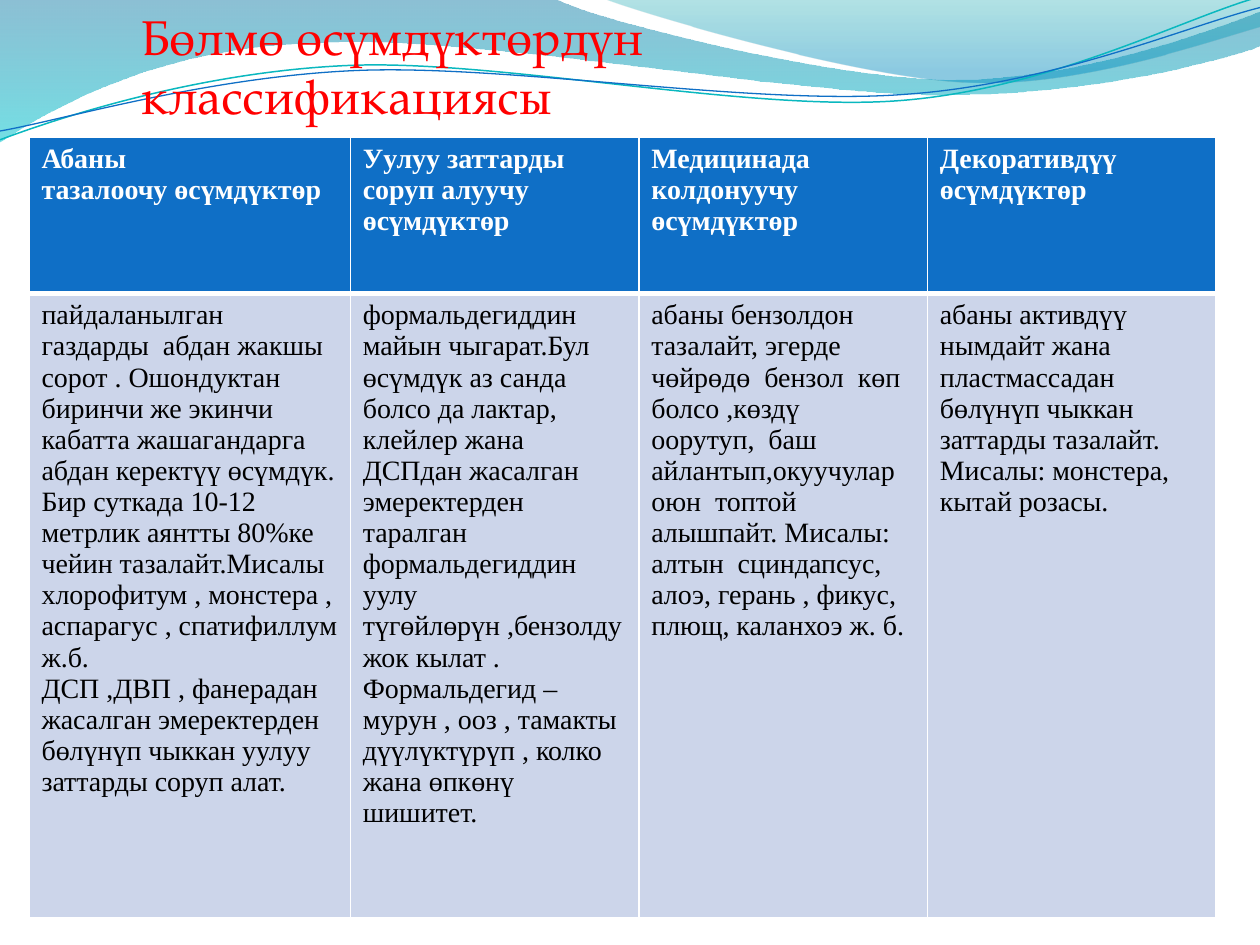
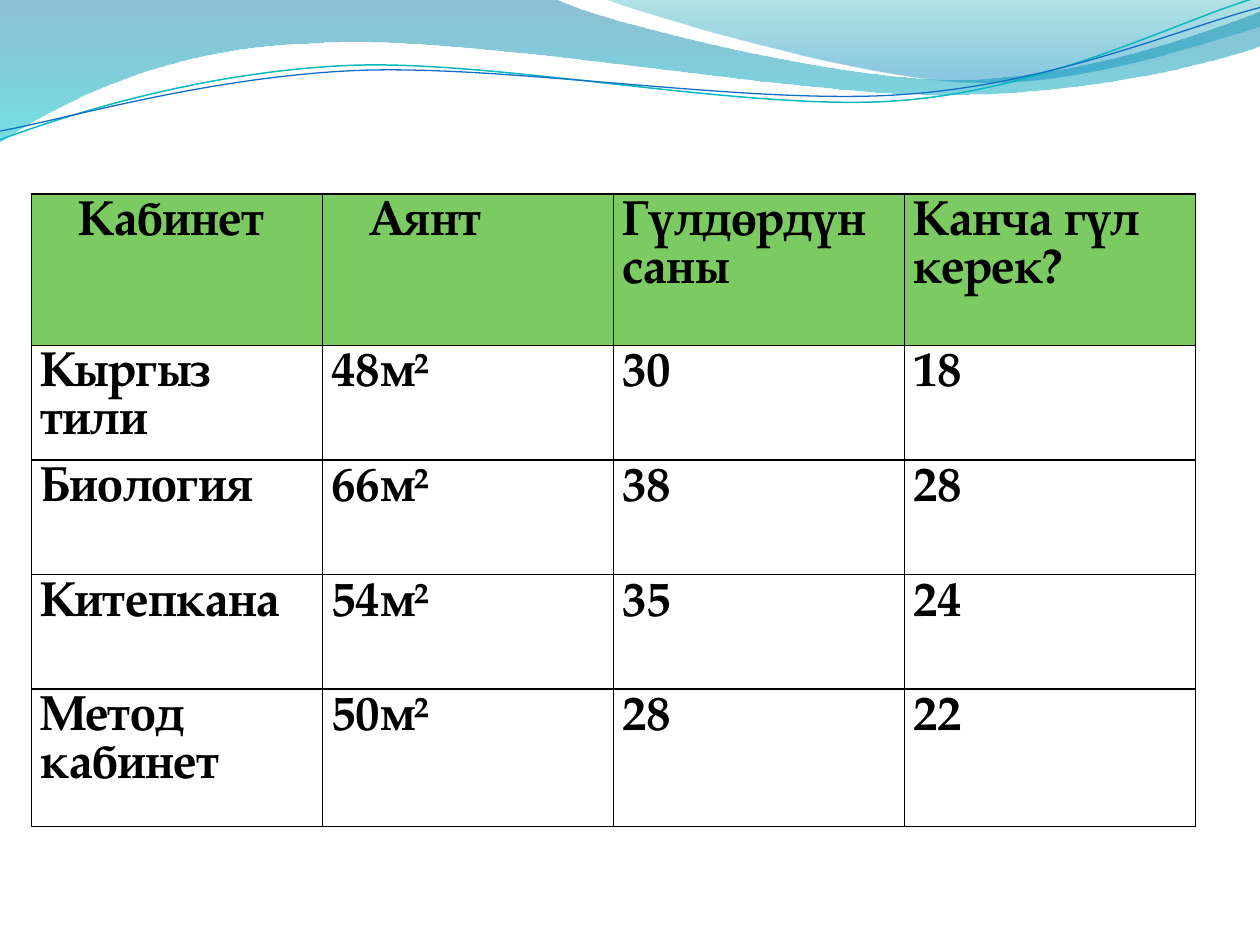
"""Build two slides on indoor plants: a classification table and a count by room."""
import pptx
import pptx.util
import pptx.dml.color
import pptx.enum.text
import pptx.oxml
import pptx.oxml.ns

Inches, Pt = pptx.util.Inches, pptx.util.Pt
RGB = pptx.dml.color.RGBColor
qn = pptx.oxml.ns.qn

WHITE = RGB(0xFF, 0xFF, 0xFF)
BLACK = RGB(0x00, 0x00, 0x00)
RED = RGB(0xFF, 0x00, 0x00)
BLUE = RGB(0x0F, 0x6F, 0xC6)
TEAL = RGB(0x0A, 0xB8, 0xBF)
GREEN = RGB(0x7C, 0xCA, 0x62)
PALE = RGB(0xCC, 0xD5, 0xEA)
DEEP = RGB(0x00, 0x74, 0xA1)
AQUA = RGB(0x00, 0xC6, 0xCF)
SEA = RGB(0x00, 0xA1, 0xA9)
SKY = RGB(0x00, 0x8B, 0xBF)
SERIF = "TeX Gyre Pagella"
ROMAN = "Times New Roman"


def trace(shapes, start, steps, close):
    """Draw an outline from points (straight) and Bézier triples (curved)."""
    dots = [step[i:i + 2] for step in steps for i in range(0, len(step), 2)]
    path = shapes.build_freeform(Inches(start[0]), Inches(start[1]))
    path.add_line_segments([(Inches(x), Inches(y)) for x, y in dots], close=close)
    shape = path.convert_to_shape()
    shape.shadow.inherit = False
    nodes = iter(list(shape.element.iter(qn("a:lnTo"))))
    for step in steps:
        node = next(nodes)
        if len(step) == 6:
            node.tag = qn("a:cubicBezTo")
            for _ in range(2):
                extra = next(nodes)
                node.append(extra[0])
                extra.getparent().remove(extra)
    return shape


def grid(slide, left, top, widths, heights, rows, face, size, looks):
    """Add a table; looks holds fill, ink, bold, edge colour and edge widths (L, R, T, B) per row."""
    frame = slide.shapes.add_table(len(rows), len(widths), Inches(left), Inches(top),
                                   Inches(sum(widths)), Inches(sum(heights)))
    table = frame.table
    table.horz_banding = False
    for col, width in zip(table.columns, widths):
        col.width = Inches(width)
    for line, height, texts, look in zip(table.rows, heights, rows, looks):
        line.height = Inches(height)
        fill, ink, bold, edge, sides = look
        for cell, text in zip(line.cells, texts):
            cell.text_frame.text = text
            for para in cell.text_frame.paragraphs:
                for run in para.runs:
                    font = run.font
                    font.name, font.size, font.bold = face, Pt(size), bold
                    font.color.rgb = ink
            cell.fill.solid()
            cell.fill.fore_color.rgb = fill
            for i, (side, width) in enumerate(zip("LRTB", sides)):
                cell._tc.get_or_add_tcPr().insert(i, pptx.oxml.parse_xml(
                    f'<a:ln{side} xmlns:a="http://schemas.openxmlformats.org/drawingml/2006/main" '
                    f'w="{Pt(width)}"><a:solidFill><a:srgbClr val="{edge}"/></a:solidFill></a:ln{side}>'))
    return table


prs = pptx.Presentation()
prs.slide_width, prs.slide_height = Inches(10), Inches(7.5)
first = prs.slides.add_slide(prs.slide_layouts[5])
second = prs.slides.add_slide(prs.slide_layouts[6])

bands = [
    ((0, 0), [(4.4, -0.01), (4.76, 0.17, 6.64, 0.63, 7.58, 0.63),
              (8.53, 0.63, 9.58, 0.26, 10, 0.09), (10.01, 0.36),
              (9.83, 0.44, 8.7, 0.76, 7.46, 0.75), (6.22, 0.75, 3.82, 0.28, 2.57, 0.34),
              (1.29, 0.36, 0.46, 0.83, -0.01, 1.13)],
     [(0, DEEP, 45), (1, AQUA, 55)]),
    ((4.79, -0.01), [(5.09, 0.11, 6.82, 0.62, 7.69, 0.65),
                     (8.56, 0.69, 9.61, 0.32, 10, 0.21), (10, 0)],
     [(0, SEA, 30), (0.8, SKY, 45)]),
]
curves = [
    ((0, 1.11), [(0.48, 0.93, 1.58, 0.57, 2.77, 0.52), (3.95, 0.47, 5.93, 0.89, 7.13, 0.8),
                 (8.33, 0.71, 9.38, 0.15, 9.98, -0.02)], TEAL, 0.85),
    ((0, 1.04), [(0.47, 0.96, 1.64, 0.61, 2.83, 0.56), (4.03, 0.51, 5.97, 0.84, 7.17, 0.75),
                 (8.36, 0.67, 9.41, 0.21, 10, 0.06)], BLUE, 0.75),
]
waves = []
for start, steps, stops in bands:
    band = trace(first.shapes, start, steps, True)
    band.line.fill.background()
    band.fill.gradient()
    band.fill.gradient_angle = 270
    for stop, (place, tint, alpha) in zip(band.fill.gradient_stops, stops):
        stop.position = place
        stop.color.rgb = tint
    tints = band.element.spPr.find(qn("a:gradFill")).iter(qn("a:srgbClr"))
    for node, stop in zip(list(tints), stops):
        node.append(node.makeelement(qn("a:alpha"), {"val": str(stop[2] * 1000)}))
    waves.append(band)
for start, steps, tint, width in curves:
    curve = trace(first.shapes, start, steps, False)
    curve.fill.background()
    curve.line.color.rgb = tint
    curve.line.width = Pt(width)
    waves.append(curve)
for i, wave in enumerate(waves):
    prs.slide_master.shapes.element.insert(2 + i, wave.element)

title = first.shapes.title
title.left, title.top, title.width, title.height = map(Inches, (1.02, 0, 7.45, 0.57))
frame = title.text_frame
frame.text = "Бөлмө өсүмдүктөрдүн классификациясы"
frame.word_wrap = True
frame.auto_size = pptx.enum.text.MSO_AUTO_SIZE.NONE
frame.vertical_anchor = pptx.enum.text.MSO_ANCHOR.TOP
frame.paragraphs[0].alignment = pptx.enum.text.PP_ALIGN.LEFT
font = frame.paragraphs[0].runs[0].font
font.name, font.size = SERIF, Pt(28)
font.color.rgb = RED

kinds = [
    ["Абаны\nтазалоочу өсүмдүктөр",
     "Уулуу заттарды соруп алуучу өсүмдүктөр",
     "Медицинада колдонуучу өсүмдүктөр",
     "Декоративдүү өсүмдүктөр"],
    ["пайдаланылган газдарды  абдан жакшы сорот . Ошондуктан биринчи же экинчи кабатта "
     "жашагандарга  абдан керектүү өсүмдүк.\n"
     "Бир суткада 10-12 метрлик аянтты 80%ке чейин тазалайт.Мисалы хлорофитум , монстера , "
     "аспарагус , спатифиллум ж.б.\n"
     "ДСП ,ДВП , фанерадан жасалган эмеректерден бөлүнүп чыккан уулуу заттарды соруп алат.",
     "формальдегиддин\n"
     "майын чыгарат.Бул өсүмдүк аз санда болсо да лактар, клейлер жана ДСПдан жасалган "
     "эмеректерден таралган формальдегиддин уулу түгөйлөрүн ,бензолду жок кылат .\n"
     "Формальдегид – мурун , ооз , тамакты дүүлүктүрүп , колко жана өпкөнү  шишитет.",
     "абаны бензолдон тазалайт, эгерде чөйрөдө  бензол  көп  болсо ,көздү   оорутуп,  баш  "
     "айлантып,окуучулар оюн  топтой   алышпайт. Мисалы: алтын  сциндапсус,\n"
     "алоэ, герань , фикус, плющ, каланхоэ ж. б.",
     "абаны активдүү нымдайт жана пластмассадан бөлүнүп чыккан заттарды тазалайт. "
     "Мисалы: монстера, кытай розасы."],
]
grid(first, 0.23, 1.09, [2.55] + [2.29] * 3, [1.24, 4.95], kinds, ROMAN, 16,
     [(BLUE, WHITE, True, WHITE, (1, 1, 1, 3)), (PALE, BLACK, False, WHITE, (1, 1, 3, 1))])

rooms = [
    ["Кабинет", "Аянт", "Гүлдөрдүн саны", "Канча гүл керек?"],
    ["Кыргыз тили", "48м²", "30", "18"],
    ["Биология", "66м²", "38", "28"],
    ["Китепкана", "54м²", "35", "24"],
    ["Метод кабинет", "50м²", "28", "22"],
]
thin = (1, 1, 1, 1)
count = grid(second, 0.25, 1.54, [2.31] * 4, [1.2, 0.91, 0.91, 0.91, 1.09], rooms, SERIF, 28,
             [(GREEN, BLACK, True, BLACK, thin)] + [(WHITE, BLACK, True, BLACK, thin)] * 4)
for cell in count.iter_cells():
    cell.margin_left = cell.margin_right = Inches(0.07)
for col in (0, 1):
    count.cell(0, col).margin_left = Inches(0.37)

prs.save("out.pptx")
